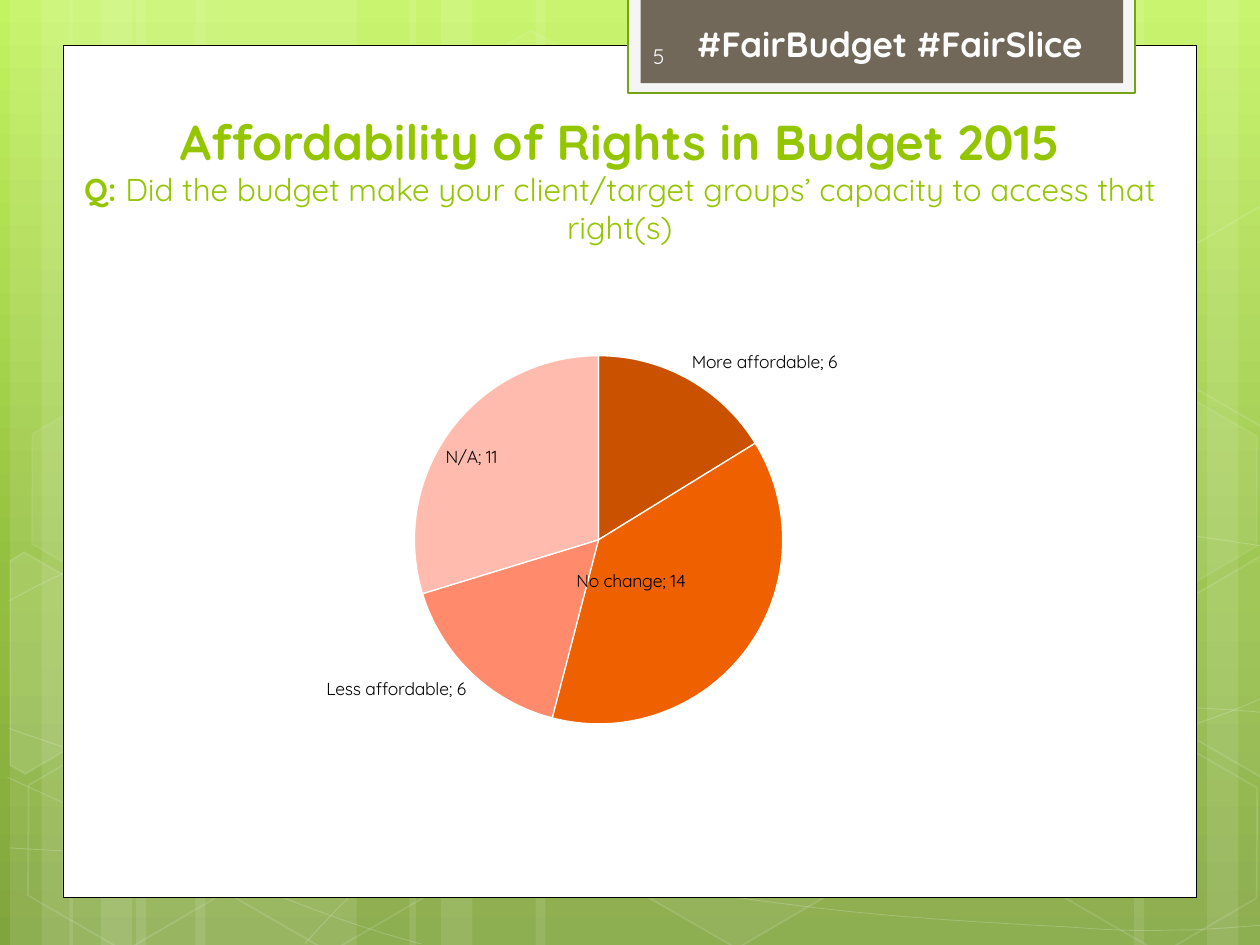
from lxml.etree import Element, SubElement
from copy import deepcopy
from math import cos, radians, sin
from pptx import Presentation
from pptx.chart.data import CategoryChartData
from pptx.dml.color import RGBColor
from pptx.enum.chart import XL_CHART_TYPE, XL_LABEL_POSITION
from pptx.enum.shapes import MSO_SHAPE
from pptx.enum.text import MSO_ANCHOR, PP_ALIGN
from pptx.oxml.ns import qn
from pptx.util import Inches, Pt

WHITE = RGBColor(0xFF, 0xFF, 0xFF)
BLACK = RGBColor(0, 0, 0)
MIST = RGBColor(0xF5, 0xF5, 0xF5)
BROWN = RGBColor(0x71, 0x68, 0x5A)
LEAF = RGBColor(0x74, 0xA5, 0x10)
LIME = RGBColor(0x94, 0xC6, 0x00)
PALE = RGBColor(0xFE, 0xFE, 0xFE)
BACKDROP = [(0, RGBColor(0xC3, 0xF3, 0x5F)), (0.62, RGBColor(0x93, 0xBF, 0x3F)),
            (1, RGBColor(0x81, 0xA5, 0x3E))]
SLICES = [RGBColor(0xC9, 0x51, 0x00), RGBColor(0xEF, 0x60, 0x00),
          RGBColor(0xFF, 0x8B, 0x6C), RGBColor(0xFF, 0xBC, 0xAE)]
FONT = "Quicksand"
TILT = 30

deck = Presentation()
deck.slide_width, deck.slide_height = Inches(10), Inches(7.5)
COLUMN = deck.slide_width / 100
ROW = deck.slide_height / 75
page = deck.slides.add_slide(deck.slide_layouts[6])


def draw(kind, frame, fill=None, opacity=100, line=None, weight=1, line_opacity=100, closed=True):
    if kind is None:
        points = [(round(x * COLUMN), round(y * ROW)) for x, y in frame]
        builder = page.shapes.build_freeform(*points[0], scale=1.0)
        builder.add_line_segments(points[1:], close=closed)
        shape = builder.convert_to_shape()
    else:
        left, top, width, height = frame
        shape = page.shapes.add_shape(kind, round(left * COLUMN), round(top * ROW),
                                      round(width * COLUMN), round(height * ROW))
    shape.shadow.inherit = False
    for paint, color in ((shape.fill, fill), (shape.line.fill, line)):
        if color is None:
            paint.background()
        else:
            paint.solid()
            paint.fore_color.rgb = color
    if line is not None:
        shape.line.width = Pt(weight)
    for route, share in (("a:solidFill/a:srgbClr", opacity), ("a:ln/a:solidFill/a:srgbClr", line_opacity)):
        for color in shape.element.spPr.xpath(route):
            if share < 100:
                SubElement(color, qn("a:alpha"), val=str(share * 1000))
    return shape


def write(lines, frame, color, align=PP_ALIGN.LEFT, anchor=MSO_ANCHOR.MIDDLE, bottom=0.05):
    left, top, width, height = frame
    box = page.shapes.add_textbox(round(left * COLUMN), round(top * ROW),
                                  round(width * COLUMN), round(height * ROW))
    box.text_frame.word_wrap = True
    box.text_frame.vertical_anchor = anchor
    box.text_frame.margin_bottom = Inches(bottom)
    para = box.text_frame.paragraphs[0]
    para.alignment = align
    for number, spans in enumerate(lines):
        if number:
            para.add_line_break()
        for text, size, bold in spans:
            span = para.add_run()
            span.text = text
            span.font.name = FONT
            span.font.size = Pt(size)
            span.font.bold = bold
            span.font.color.rgb = color


backdrop = page.background.fill
backdrop.gradient()
backdrop.gradient_angle = 270
stop_list = page.element.xpath("p:cSld/p:bg//a:gsLst")[0]
stop_list.append(deepcopy(stop_list[-1]))
for stop, (position, color) in zip(backdrop.gradient_stops, BACKDROP):
    stop.position = position
    stop.color.rgb = color

for left, width in [(10.8, 17.5), (0.8, 5), (3.3, 8.3), (15.5, 17.5), (5.5, 5), (8, 8.3),
                    (73.3, 17.5), (95.8, 5), (90, 8.3), (42.5, 30.8), (32.5, 5), (35, 8.3)]:
    draw(MSO_SHAPE.RECTANGLE, (left, 0, width, 75), WHITE, 10)

WAVES = [
    [(0.7, 67.3), (6.1, 67.6), (11.5, 67.9), (19, 67.8), (26.5, 67.7), (35.8, 67.5), (45.8, 66.5),
     (55.8, 65.5), (70, 63.6), (79.2, 61.7), (88.3, 59.8), (97.7, 56.8), (100.7, 55.1)],
    [(0.7, 47.7), (3.6, 46.1), (6.5, 44.6), (12.1, 43.1), (17.8, 41.6), (25.9, 39.4), (34.7, 38.7),
     (43.6, 38), (54.4, 37.9), (65.4, 38.7), (76.4, 39.5), (94.7, 42.6), (100.7, 43.4)],
    [(0.6, 61.7), (12.7, 67.2), (24.7, 72.7), (33.4, 74.9)],
    [(0.7, 57.8), (3.8, 58.9), (7, 60), (12.8, 61.6), (18.6, 63.1), (27.3, 65.6), (35.7, 67.3),
     (44, 69), (54.5, 70.8), (62.8, 71.8), (71.1, 72.9), (80, 73.3), (85.3, 73.6),
     (90.5, 74), (91.9, 73.8), (94.5, 73.8), (97.1, 73.7), (98.9, 73.5), (100.7, 73.4)],
    [(24.2, 74.9), (26, 72.9), (27.8, 70.9), (30.2, 69.1), (32.6, 67.3), (36, 65.3), (38.8, 63.9),
     (41.6, 62.5), (43.3, 61.9), (47, 60.9), (50.6, 59.9), (57.3, 58.5), (60.8, 57.8),
     (64.4, 57.1), (64.9, 57.1), (68, 56.9), (71.1, 56.6), (76, 56.3), (79.4, 56.2),
     (82.9, 56.1), (88.6, 56.2), (88.6, 56.2), (88.6, 56.2), (95.3, 56.2), (95.3, 56.2),
     (97.1, 56.3), (98.8, 56.4), (99.7, 56.5), (100.6, 56.6), (100.3, 56.5), (100.6, 56.6)],
]
for wave in WAVES:
    curve = draw(None, wave, line=WHITE, weight=0.5, line_opacity=20, closed=False)
    outline = curve.element.xpath(".//a:path")[0]
    corners = outline.xpath("a:lnTo")
    for first in range(0, len(corners), 3):
        bend = SubElement(outline, qn("a:cubicBezTo"))
        for corner in corners[first:first + 3]:
            bend.append(corner[0])
            outline.remove(corner)

for left, top, opacity, line_opacity in [
        (33.4, 3.6, 4, 8), (49.7, 58.9, 6, 12), (1.1, 59.1, 0, 12), (1.4, 31.2, 7, 8), (17.4, 59.2, 0, 12),
        (75.3, 45.3, 10, 12), (83.4, 59.3, 0, 12), (83.4, 31.4, 7, 8)]:
    hexagon = draw(MSO_SHAPE.HEXAGON, (left, top, 17.5, 15.2), WHITE if opacity else None, opacity,
                   WHITE, line_opacity=line_opacity)
    hexagon.adjustments[0] = 0.285
    hexagon.rotation = TILT

for middle, points, opacity in [
        ((3.6, 53.5), [(0.8, 44.5), (1.9, 43.8), (9.6, 48.2), (9.5, 57), (2, 61.4), (0.8, 60.7)], 10),
        ((98.5, 52), [(92.6, 48.5), (100.1, 44.1), (100.9, 44.6), (100.9, 61.3), (100.2, 61.7), (92.6, 57.3)], 4),
        ((98.5, 24.1), [(92.6, 20.7), (100.1, 16.3), (101, 16.8), (100.9, 33.5), (100.2, 33.9), (92.6, 29.5)], 0)]:
    cosine, sine = cos(radians(TILT)), sin(radians(TILT))
    upright = [(middle[0] + (x - middle[0]) * cosine + (y - middle[1]) * sine,
                middle[1] - (x - middle[0]) * sine + (y - middle[1]) * cosine) for x, y in points]
    piece = draw(None, upright, WHITE if opacity else None, opacity, WHITE, line_opacity=12)
    piece.rotation = TILT

draw(MSO_SHAPE.RECTANGLE, (5, 3.6, 90, 67.65), WHITE, line=BLACK, weight=0.5)
draw(MSO_SHAPE.RECTANGLE, (49.85, -0.2, 40.2, 7.6), MIST, line=LEAF, weight=1.25)
draw(MSO_SHAPE.RECTANGLE, (50.85, -0.2, 38.3, 6.8), BROWN)

write([[("Affordability of Rights in Budget 2015", 28, True)],
       [("Q: ", 18, True),
        ("Did the budget make your client/target groups’ capacity to access that right(s)", 18, False)]],
      (4.3, 11.5, 89.8, 11.8), LIME, align=PP_ALIGN.CENTER, anchor=MSO_ANCHOR.BOTTOM, bottom=0.38)
write([[(" #FairBudget #FairSlice", 20, True)]], (51.6, 2.05, 37.3, 2.8), PALE, align=PP_ALIGN.CENTER)
write([[("5", 12, False)]], (50.85, 2.45, 14.6, 4), PALE)

data = CategoryChartData()
data.categories = ["More affordable", "No change", "Less affordable", "N/A"]
data.add_series("Series 1", (6, 14, 6, 11))
chart = page.shapes.add_chart(XL_CHART_TYPE.PIE, round(13.8 * COLUMN), round(24.9 * ROW),
                              round(66.1 * COLUMN), round(37 * ROW), data).chart
chart.has_title = False
chart.has_legend = False
chart.font.name = FONT
chart.font.size = Pt(10)
chart.font.color.rgb = BLACK
pie = chart.plots[0]
pie.vary_by_categories = True
series = pie.series[0]

for index, color in enumerate(SLICES):
    point = series.points[index]
    point.format.fill.solid()
    point.format.fill.fore_color.rgb = color
    point.format.line.color.rgb = WHITE
    point.format.line.width = Pt(0.75)

series.data_labels.show_value = True
series.data_labels.show_category_name = True
series.data_labels.position = XL_LABEL_POSITION.BEST_FIT
series.points[1].data_label.position = XL_LABEL_POSITION.CENTER
moved_label = chart.element.xpath(".//c:dLbl")[0]
moved_label.find(qn("c:showCatName")).set("val", "1")
for flag in chart.element.xpath(".//c:ser//c:showBubbleSize"):
    separator = Element(qn("c:separator"))
    separator.text = "; "
    flag.addnext(separator)

plot_area = chart.element.xpath(".//c:plotArea")[0]
for old in plot_area.xpath("c:layout"):
    plot_area.remove(old)
for parent, place, settings in [
        (plot_area, 0, {"layoutTarget": "inner", "xMode": "edge", "yMode": "edge",
                        "x": 0.1, "y": 0.09, "w": 0.82, "h": 0.79}),
        (moved_label, 1, {"x": -0.05, "y": -0.03})]:
    layout = Element(qn("c:layout"))
    manual = SubElement(layout, qn("c:manualLayout"))
    for name, value in settings.items():
        SubElement(manual, qn("c:" + name), val=str(value))
    parent.insert(place, layout)

deck.save("out.pptx")
